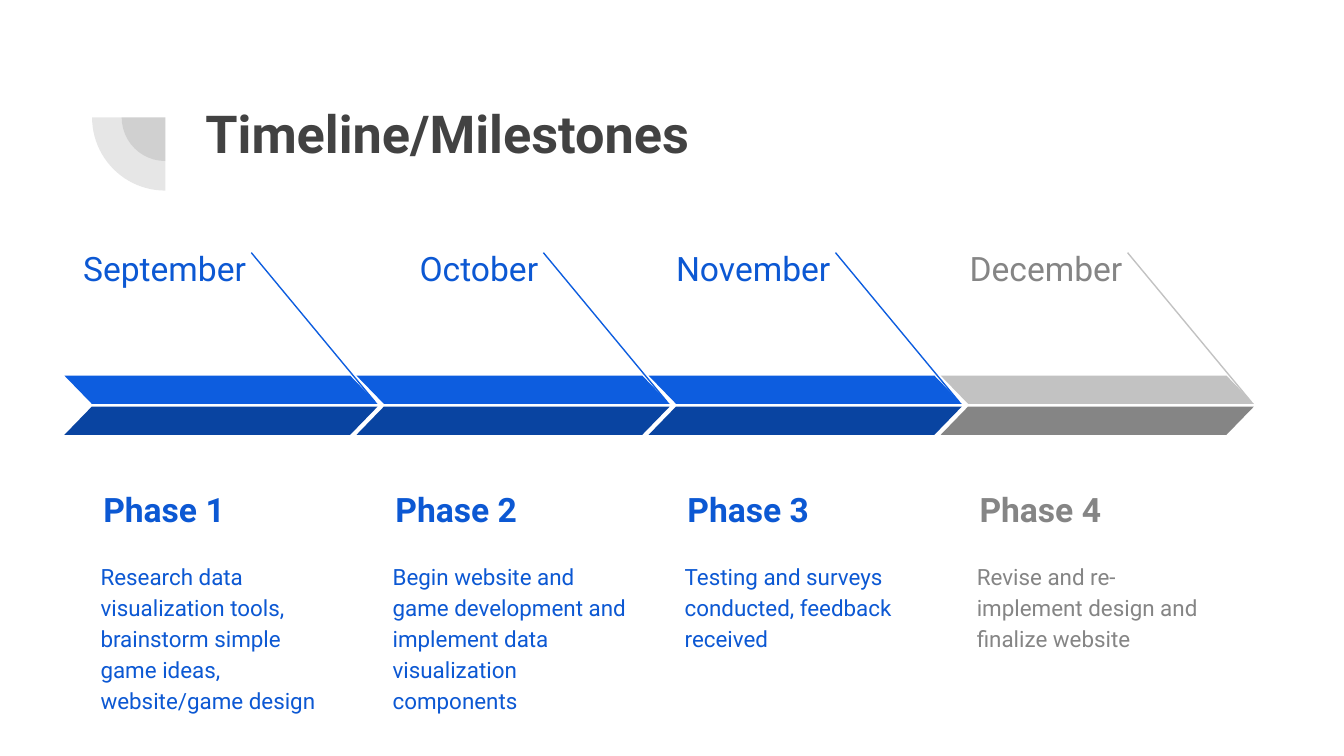
"""Build a four-phase timeline slide on a grid of cells a hundredth of an inch wide."""
from dataclasses import dataclass
from typing import NamedTuple

from lxml.etree import SubElement
from pptx import Presentation
from pptx.dml.color import RGBColor
from pptx.enum.shapes import MSO_CONNECTOR, MSO_SHAPE
from pptx.enum.text import MSO_ANCHOR as Anchor, PP_ALIGN as Align
from pptx.oxml.ns import qn
from pptx.util import Inches, Pt

COLS = 1000
ROWS = COLS * 9 / 16
FIRST_COL, PITCH = 48, 217.33
FONT = "Roboto"
COLORS = {
    "title": "424242",
    "blue_text": "0C58D3",
    "blue_light": "0D5DDF",
    "blue_dark": "0944A1",
    "gray_light": "C2C2C2",
    "gray_dark": "858585",
}


class Box(NamedTuple):
    col: float
    row: float
    cols: float
    rows: float

    def emu(self) -> list:
        return [cells(n) for n in self]


@dataclass(frozen=True)
class Theme:
    text: str
    light: str
    dark: str


@dataclass(frozen=True)
class Phase:
    month: str
    name: str
    details: str
    theme: Theme


BLUE = Theme("blue_text", "blue_light", "blue_dark")
GRAY = Theme("gray_dark", "gray_light", "gray_dark")
PHASES = [
    Phase("September", "Phase 1", "Research data visualization tools, brainstorm "
          "simple game ideas, website/game design", BLUE),
    Phase("October", "Phase 2", "Begin website and game development and "
          "implement data visualization components", BLUE),
    Phase("November", "Phase 3", "Testing and surveys conducted, feedback received", BLUE),
    Phase("December", "Phase 4", "Revise and re-implement design and finalize website", GRAY),
]


def cells(n: float) -> int:
    return Inches(n / 100)


def rgb(name: str) -> RGBColor:
    return RGBColor.from_string(COLORS[name])


def add_filled(s, kind, box: Box, color: str, adjustments: list):
    sp = s.shapes.add_shape(kind, *box.emu())
    sp.shadow.inherit = False
    sp.fill.solid()
    sp.fill.fore_color.rgb = rgb(color)
    sp.line.fill.background()
    for i, value in enumerate(adjustments):
        sp.adjustments[i] = value
    return sp


def add_quarter(s, radius: float) -> None:
    box = Box(123 - radius, 87.3 - radius, 2 * radius, 2 * radius)
    sp = add_filled(s, MSO_SHAPE.PIE, box, "title", [54, 108])
    clr = next(sp._element.spPr.iter(qn("a:srgbClr")))
    SubElement(clr, qn("a:alpha")).set("val", "13000")


def add_text(s, box: Box, text: str, size: int, color: str, bold: bool = False,
             align=Align.LEFT, anchor=Anchor.TOP, spacing: float = 1.15, after: int = 0) -> None:
    tf = s.shapes.add_textbox(*box.emu()).text_frame
    tf.word_wrap = True
    tf.vertical_anchor = anchor
    tf.margin_left = tf.margin_right = tf.margin_top = tf.margin_bottom = cells(10)
    p = tf.paragraphs[0]
    p.text = text
    p.alignment, p.line_spacing, p.space_after = align, spacing, Pt(after)
    p.font.name, p.font.size, p.font.bold = FONT, Pt(size), bold
    p.font.color.rgb = rgb(color)


def add_leader(s, col: float, color: str) -> None:
    line = s.shapes.add_connector(MSO_CONNECTOR.STRAIGHT, cells(col + 139), cells(188),
                                  cells(col + 231), cells(299))
    line.line.color.rgb = rgb(color)
    line.line.width = Pt(0.75)
    SubElement(line._element.spPr, qn("a:effectLst"))


def add_phase(s, col: float, phase: Phase) -> None:
    theme = phase.theme
    add_text(s, Box(col - 5, 170, 150, 36), phase.month, 18, theme.text,
             align=Align.RIGHT, after=16)
    add_text(s, Box(col + 19, 337, 191, 67), phase.name, 18, theme.text,
             bold=True, anchor=Anchor.BOTTOM)
    add_text(s, Box(col + 17, 406, 196, 110), phase.details, 12, theme.text, after=16)
    add_leader(s, col, theme.light)
    top, _ = [add_filled(s, MSO_SHAPE.PARALLELOGRAM, Box(col, row, 233, 21), color, [0.97])
              for row, color in ((279.5, theme.light), (302.5, theme.dark))]
    top._element.spPr.find(qn("a:xfrm")).set("flipH", "1")


def main() -> None:
    prs = Presentation()
    prs.slide_width, prs.slide_height = cells(COLS), cells(ROWS)
    s = prs.slides.add_slide(prs.slide_layouts[6])
    for radius in (32.5, 54.5):
        add_quarter(s, radius)
    for i, phase in enumerate(PHASES):
        add_phase(s, FIRST_COL + i * PITCH, phase)
    add_text(s, Box(143, 65, 769, 109), "Timeline/Milestones", 28, "title",
             bold=True, spacing=1.0)
    prs.save("out.pptx")


if __name__ == "__main__":
    main()
